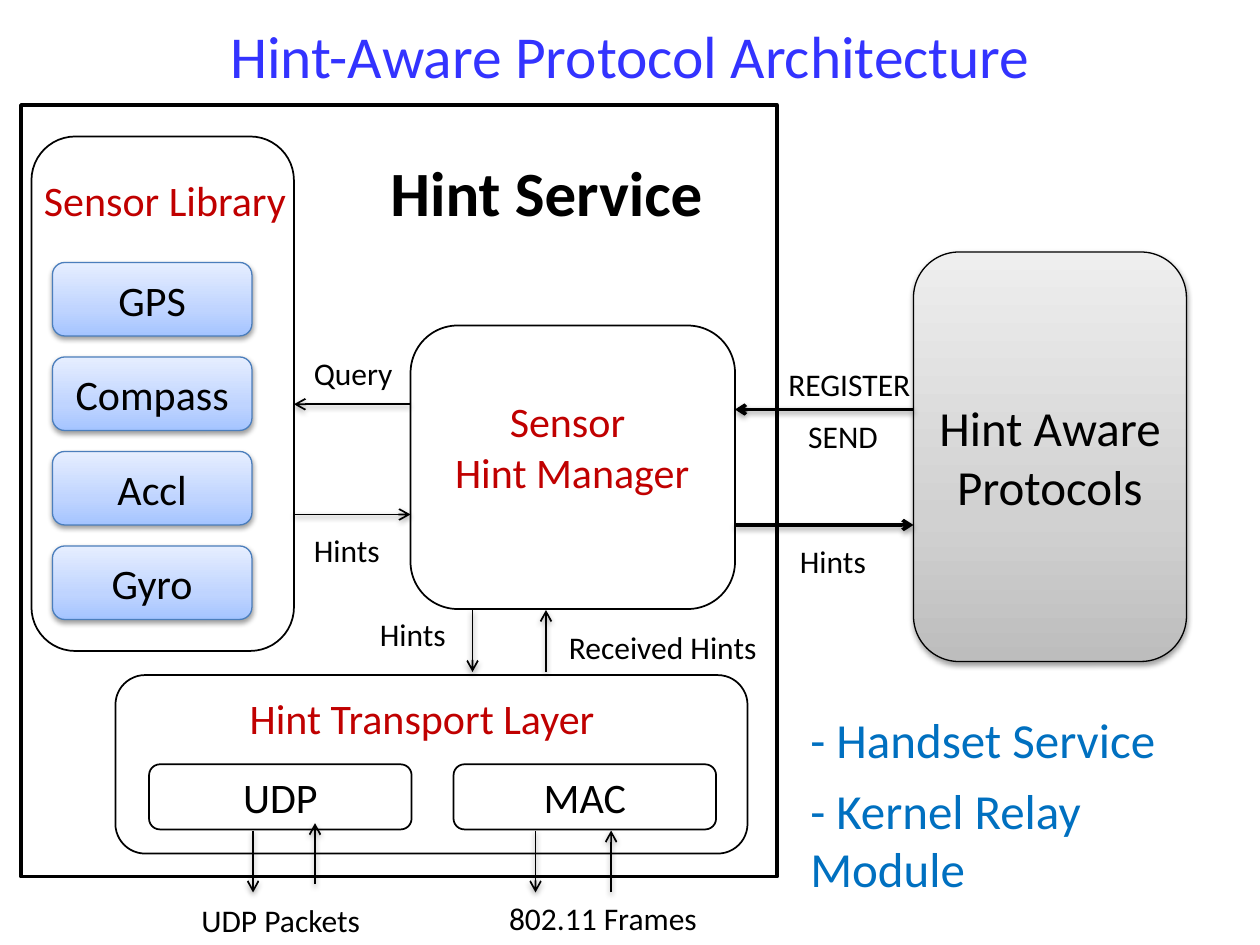
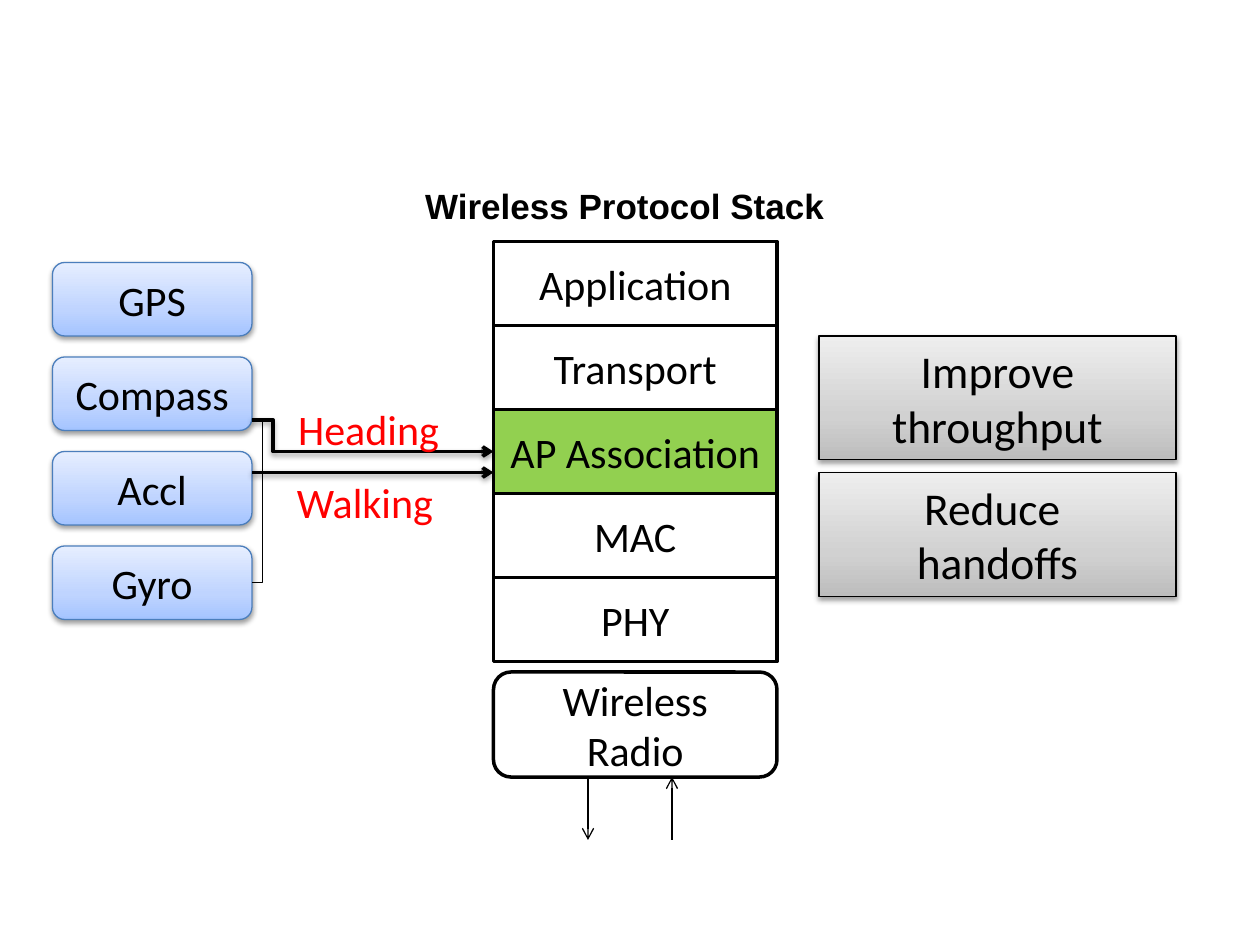
"""Build two slides on a protocol design fed by sensor hints."""
from pptx import Presentation
from pptx.dml.color import RGBColor
from pptx.enum.shapes import MSO_CONNECTOR, MSO_SHAPE
from pptx.enum.text import MSO_ANCHOR, MSO_AUTO_SIZE, PP_ALIGN
from pptx.oxml import parse_xml
from pptx.oxml.ns import nsdecls, qn
from pptx.util import Emu, Pt

SCALE = 7620
BLACK = RGBColor(0x00, 0x00, 0x00)
WHITE = RGBColor(0xFF, 0xFF, 0xFF)
GREEN = RGBColor(0x92, 0xD0, 0x50)
EDGE = RGBColor(0x4B, 0x7E, 0xBC)
TITLE = RGBColor(0x33, 0x33, 0xFF)
CRIMSON = RGBColor(0xC0, 0x00, 0x00)
RED = RGBColor(0xFF, 0x00, 0x00)
AZURE = RGBColor(0x00, 0x70, 0xC0)
SKY = tuple(map(RGBColor.from_string, ("A4C4FF", "BFD4FF", "E6EEFF")))
GRAY = tuple(map(RGBColor.from_string, ("BDBDBD", "D1D1D1", "EEEEEE")))
ROUND = MSO_SHAPE.ROUNDED_RECTANGLE
RECT = MSO_SHAPE.RECTANGLE
CENTER = PP_ALIGN.CENTER


def px(*nums):
    """Turn px lengths into EMU."""
    return [Emu(num * SCALE) for num in nums]


def node(tag, attrs="", inner=""):
    """Make one drawing element."""
    return parse_xml(f"<a:{tag} {nsdecls('a')} {attrs}>{inner}</a:{tag}>")


class Deck:
    """Hold the style and the current slide."""

    def __init__(self):
        """Start an empty deck."""
        self.show = Presentation()
        self.show.slide_width, self.show.slide_height = px(1200, 900)
        self.slide = None

    def page(self, title=None):
        """Add a slide, with a title if one is given."""
        layout = self.show.slide_layouts[5 if title else 6]
        self.slide = self.show.slides.add_slide(layout)
        if title:
            head = self.slide.shapes.title
            head.left, head.top, head.width, head.height = px(60, 0, 1080, 104)
            self.words(head.text_frame, title, 34, TITLE, CENTER)
            head.text_frame.vertical_anchor = MSO_ANCHOR.MIDDLE

    def words(self, frame, text, size, color, align, bold=False, font="Calibri"):
        """Fill a text frame, one paragraph for each line."""
        for pos, line in enumerate(text.split("\n")):
            para = frame.add_paragraph() if pos else frame.paragraphs[0]
            para.alignment = align
            run = para.add_run()
            run.text = line
            run.font.name = font
            run.font.size = Pt(size)
            run.font.bold = bold
            run.font.color.rgb = color

    def shade(self, props):
        """Add the soft drop shadow."""
        old = props.find(qn("a:effectLst"))
        if old is not None:
            props.remove(old)
        drop = ('<a:outerShdw blurRad="40000" dist="20000" dir="5400000" rotWithShape="0">'
                '<a:srgbClr val="000000"><a:alpha val="38000"/></a:srgbClr></a:outerShdw>')
        props.append(node("effectLst", inner=drop))

    def box(self, at, text="", kind=ROUND, fill=WHITE, edge=BLACK, width=1, size=24):
        """Draw a box; a tuple of three colours gives a shaded gradient."""
        shape = self.slide.shapes.add_shape(kind, *px(*at))
        shape.line.color.rgb = edge
        shape.line.width = Pt(width)
        shape.shadow.inherit = False
        if fill in (SKY, GRAY):
            stops = "".join(
                f'<a:gs pos="{pos}000"><a:srgbClr val="{color}"/></a:gs>'
                for pos, color in zip((0, 35, 100), fill))
            inner = f'<a:gsLst>{stops}</a:gsLst><a:lin ang="16200000" scaled="0"/>'
            props = shape._element.spPr
            props.insert(2, node("gradFill", 'rotWithShape="1"', inner))
            self.shade(props)
        else:
            shape.fill.solid()
            shape.fill.fore_color.rgb = fill
        if text:
            frame = shape.text_frame
            frame.word_wrap = True
            frame.vertical_anchor = MSO_ANCHOR.MIDDLE
            self.words(frame, text, size, BLACK, CENTER)

    def label(self, at, text, size=18, color=BLACK, align=PP_ALIGN.LEFT,
              bold=False, font="Calibri", wrap=False):
        """Place free text."""
        frame = self.slide.shapes.add_textbox(*px(*at)).text_frame
        frame.word_wrap = wrap
        frame.auto_size = MSO_AUTO_SIZE.SHAPE_TO_FIT_TEXT
        self.words(frame, text, size, color, align, bold, font)

    def link(self, ends, width=1, shade=True, head=True, bend=None, corner=False):
        """Join two points, straight or with a bend."""
        elbow = corner or bend is not None
        kind = MSO_CONNECTOR.ELBOW if elbow else MSO_CONNECTOR.STRAIGHT
        line = self.slide.shapes.add_connector(kind, *px(*ends))
        line.line.color.rgb = BLACK
        line.line.width = Pt(width)
        props = line._element.spPr
        shape = props.find(qn("a:prstGeom"))
        if corner:
            shape.set("prst", "bentConnector2")
        if bend is not None:
            guide = node("gd", f'name="adj1" fmla="val {bend}"')
            shape.find(qn("a:avLst")).append(guide)
        if head:
            props.find(qn("a:ln")).append(node("tailEnd", 'type="arrow"'))
        if shade:
            self.shade(props)
        else:
            props.append(node("effectLst"))

    def tiles(self):
        """Stack the four sensor tiles."""
        for row, name in enumerate(("GPS", "Compass", "Accl", "Gyro")):
            self.box((50, 250 + 90 * row, 190, 70), name,
                     fill=SKY, edge=EDGE, width=0.75)


def design(deck):
    """Draw the slide on the hint service."""
    deck.page("Hint-Aware Protocol Architecture")
    deck.box((20, 100, 720, 735), kind=RECT, width=2)
    deck.box((30, 130, 250, 490))
    deck.tiles()
    deck.box((110, 643, 602, 170))
    for left, name in ((142, "UDP"), (432, "MAC")):
        deck.box((left, 728, 250, 62), name)
    deck.box((391, 310, 309, 270))
    deck.box((870, 240, 260, 390), "Hint Aware Protocols",
             fill=GRAY, width=0.75, size=28)

    deck.label((30, 160, 257, 60), "Sensor Library", 24, CRIMSON)
    deck.label((226, 654, 356, 60), "Hint Transport Layer", 24, CRIMSON)
    deck.label((420, 371, 250, 109), "Sensor \nHint Manager", 24, CRIMSON, CENTER)
    deck.label((360, 140, 325, 85), "Hint Service", 36, bold=True)

    for ends in ((870, 390, 700, 390), (700, 500, 870, 500)):
        deck.link(ends, 2)
    for ends in ((391, 385, 280, 385), (280, 490, 391, 490),
                 (450, 581, 450, 640), (520, 640, 520, 581),
                 (241, 791, 241, 850), (300, 842, 300, 784),
                 (510, 791, 510, 850), (582, 850, 582, 791)):
        deck.link(ends)

    for left, top, width, text in (
            (739, 342, 142, "REGISTER"), (758, 391, 91, "SEND"),
            (287, 331, 100, "Query"), (287, 500, 88, "Hints"),
            (750, 510, 88, "Hints"), (350, 580, 88, "Hints"),
            (530, 592, 205, "Received Hints"),
            (180, 852, 176, "UDP Packets"), (473, 850, 205, "802.11 Frames")):
        deck.label((left, top, width, 48), text)
    for row, text in enumerate(("- Handset Service", "- Kernel Relay Module")):
        deck.label((760, 670 + 67 * row, 408, 68), text, 28, AZURE)


def stack(deck):
    """Draw the slide on the wireless stack."""
    deck.page()
    layers = ("Application", "Transport", "AP Association", "MAC", "PHY")
    for row, name in enumerate(layers):
        fill = GREEN if name == "AP Association" else WHITE
        deck.box((470, 230 + 80 * row, 270, 80), name, RECT, fill, width=2)
    deck.box((470, 640, 270, 100), "Wireless Radio", width=2)
    deck.label((390, 170, 410, 53), "Wireless Protocol Stack", 20,
               align=CENTER, bold=True, font="Arial", wrap=True)
    deck.tiles()

    deck.link((240, 450, 470, 450), 2)
    deck.link((240, 400, 470, 430), 2, bend=8700)
    deck.link((240, 555, 250, 400), 0.75, shade=False, head=False, corner=True)
    for ends in ((560, 740, 560, 800), (640, 800, 640, 740)):
        deck.link(ends, 0.75, shade=False)
    deck.label((271, 378, 160, 60), "Heading", 24, RED, CENTER)
    deck.label((269, 448, 157, 60), "Walking", 24, RED, CENTER)
    for row, text in enumerate(("Improve throughput", "Reduce \nhandoffs")):
        deck.box((780, 320 + 130 * row, 340, 118), text, RECT, GRAY,
                 width=0.75, size=26)


def main():
    """Build and save the deck."""
    deck = Deck()
    design(deck)
    stack(deck)
    deck.show.save("out.pptx")


if __name__ == "__main__":
    main()
